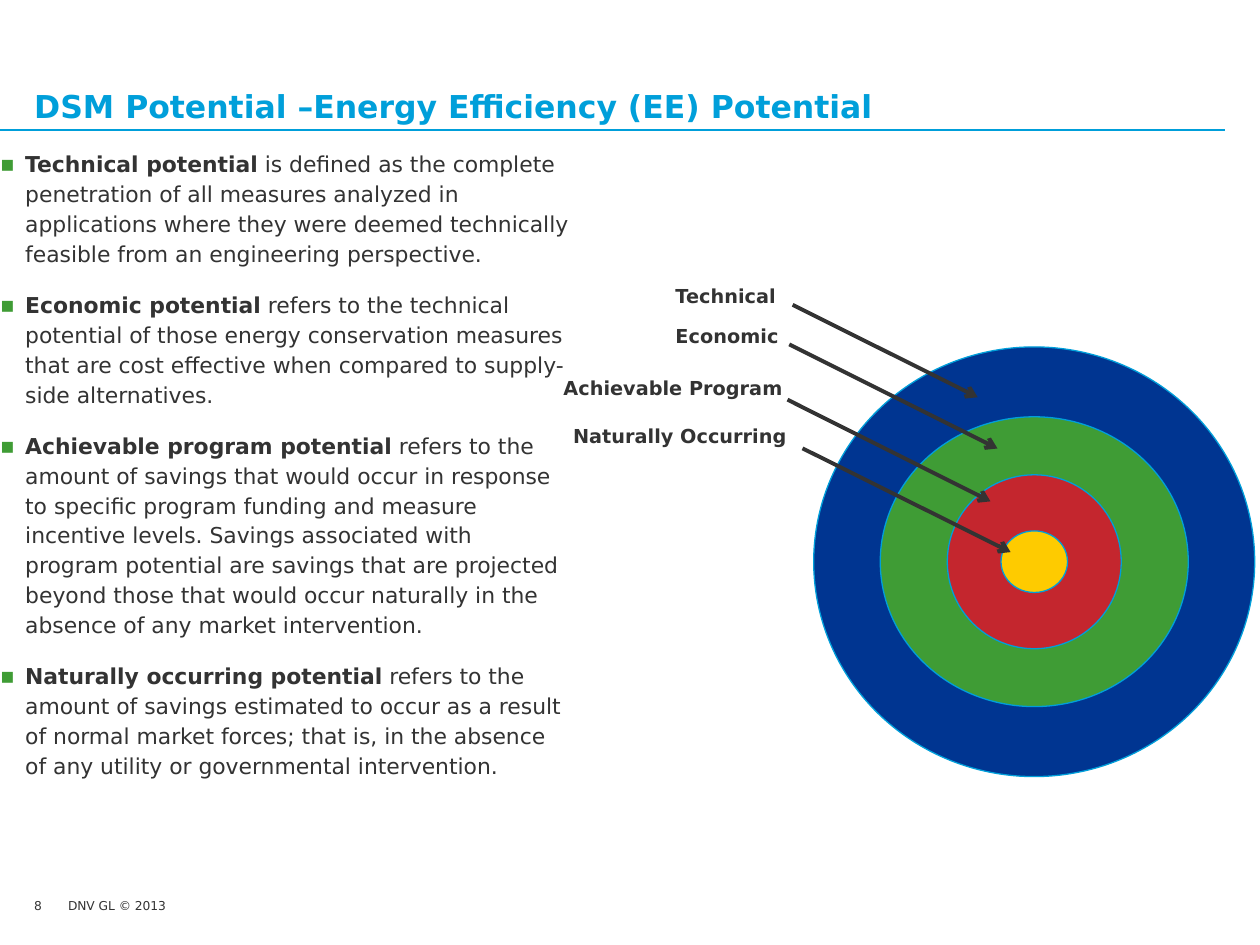
from lxml.etree import SubElement as Sub
from pptx import Presentation
from pptx.dml.color import RGBColor as RGB
from pptx.enum.shapes import MSO_CONNECTOR as Conn, MSO_SHAPE as Shape
from pptx.enum.text import MSO_ANCHOR as Anchor, MSO_AUTO_SIZE as Auto, PP_ALIGN as Align
from pptx.oxml.ns import qn
from pptx.util import Pt

HUE = {"text": "333333", "sky": "009FDA", "navy": "003591",
       "green": "3F9C35", "red": "C4262E", "gold": "FECB00"}
FONT = "DejaVu Sans"

deck = Presentation()
deck.slide_width, deck.slide_height = Pt(720), Pt(540)
slide = deck.slides.add_slide(deck.slide_layouts[1])
shapes = slide.shapes


def write(box, paras, at, size=11, color="text", lead=1.0, gap=0,
          anchor=Anchor.TOP, bullet=None, wrap=True):
    """Place a box and fill it; each paragraph is a list of (text, bold) runs."""
    box.left, box.top, box.width, box.height = [Pt(v) for v in at]
    frame = box.text_frame
    frame.margin_left = frame.margin_top = frame.margin_right = frame.margin_bottom = 0
    frame.word_wrap, frame.auto_size = wrap, Auto.NONE
    frame.vertical_anchor = anchor
    for i, runs in enumerate(paras):
        para = frame.add_paragraph() if i else frame.paragraphs[0]
        para.alignment, para.line_spacing = Align.LEFT, lead
        para.space_before, para.space_after = Pt(gap if i else 0), Pt(gap)
        if bullet:
            props = para._p.get_or_add_pPr()
            props.set("marL", str(Pt(14.4)))
            props.set("indent", str(-Pt(14.4)))
            tint = Sub(props, qn("a:buClr"))
            Sub(tint, qn("a:srgbClr"), val=HUE["green"])
            Sub(props, qn("a:buFont"), typeface=FONT)
            Sub(props, qn("a:buChar"), char=bullet)
        for text, bold in runs:
            run = para.add_run()
            run.text = text
            font = run.font
            font.name, font.size, font.bold = FONT, Pt(size), bold
            font.color.rgb = RGB.from_string(HUE[color])


def draw(start, end, color, width):
    """Draw a straight line without a shadow."""
    line = shapes.add_connector(Conn.STRAIGHT, *[Pt(v) for v in start + end])
    line.line.color.rgb = RGB.from_string(HUE[color])
    line.line.width = Pt(width)
    Sub(line._element.spPr, qn("a:effectLst"))
    return line


# Footer, page number and title rule
for text, left, width in [("DNV GL © 2013", 38.9, 58), ("8", 19.5, 18.5)]:
    write(shapes.add_textbox(0, 0, 0, 0), [[(text, False)]],
          (left, 513.5, width, 14), size=7, wrap=False)
draw((0, 74.2), (700, 74.2), "sky", 1)

# Title
write(shapes.title, [[("DSM Potential –Energy Efficiency (EE) Potential", True)]],
      (19.5, 18.7, 680.5, 52.5), size=18, color="sky", anchor=Anchor.BOTTOM)

# Definitions
terms = [
    ("Technical potential",
     " is defined as the complete penetration of all measures analyzed in applications "
     "where they were deemed technically feasible from an engineering perspective."),
    ("Economic potential",
     " refers to the technical potential of those energy conservation measures that are "
     "cost effective when compared to supply-side alternatives."),
    ("Achievable program potential",
     " refers to the amount of savings that would occur in response to specific program "
     "funding and measure incentive levels. Savings associated with program potential are "
     "savings that are projected beyond those that would occur naturally in the absence of "
     "any market intervention."),
    ("Naturally occurring potential",
     " refers to the amount of savings estimated to occur as a result of normal market "
     "forces; that is, in the absence of any utility or governmental intervention."),
]
write(slide.placeholders[1], [[(term, True), (rest, False)] for term, rest in terms],
      (0, 84.2, 325.5, 429), size=12.5, lead=1.14, gap=6, bullet="▪")

# Target rings, all on one centre
mid_x, mid_y = 591, 321
rings = [("navy", 252, 245.5), ("green", 176, 165.6), ("red", 99.4, 99.4), ("gold", 38, 35.2)]
for color, width, height in rings:
    ring = shapes.add_shape(Shape.OVAL, Pt(mid_x - width / 2), Pt(mid_y - height / 2),
                            Pt(width), Pt(height))
    ring.shadow.inherit = False
    ring.fill.solid()
    ring.fill.fore_color.rgb = RGB.from_string(HUE[color])
    ring.line.color.rgb = RGB.from_string(HUE["sky"])
    ring.line.width = Pt(0.75)

# Labels, each with an arrow into its ring
labels = [
    ("Technical", (386, 160.5, 65, 14.4), (453, 174.2), (558.7, 227)),
    ("Economic", (386, 183.8, 65, 14.4), (451, 196.8), (570, 256.3)),
    ("Achievable Program", (322, 213.3, 129, 13), (450, 228.4), (566, 286.5)),
    ("Naturally Occurring", (327.5, 240.7, 131, 15), (458.6, 256.2), (577.5, 315.5)),
]
for text, at, start, end in labels:
    arrow = draw(start, end, "text", 2.25)
    Sub(arrow.line._get_or_add_ln(), qn("a:tailEnd"), type="arrow")
    write(shapes.add_textbox(0, 0, 0, 0), [[(text, True)]], at, lead=1.13)

deck.save("out.pptx")
